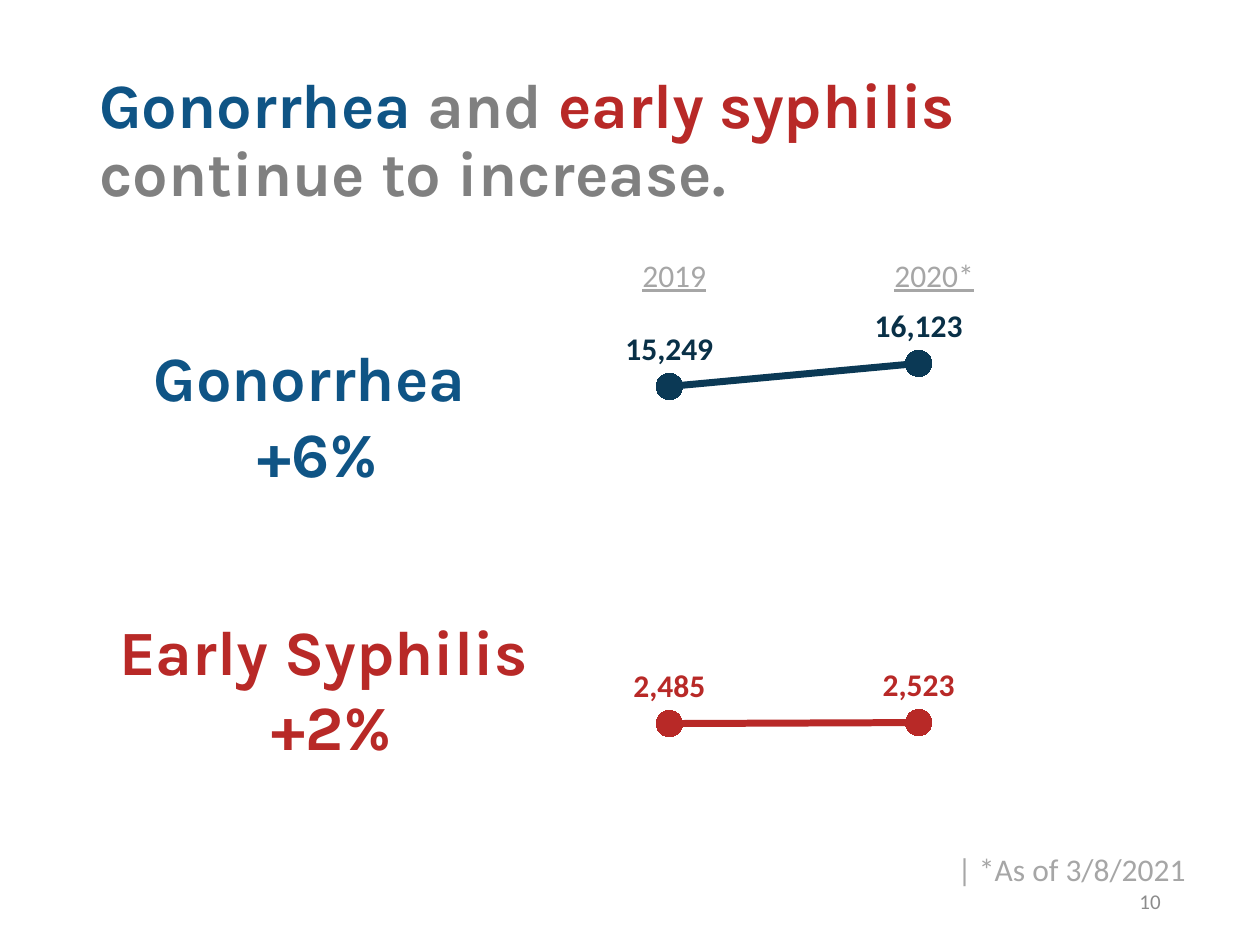
"""Build the slide on the rise of gonorrhea and early syphilis, 2019 to 2020."""
from pptx import Presentation
from pptx.chart.data import CategoryChartData
from pptx.dml.color import RGBColor
from pptx.enum.chart import XL_CHART_TYPE, XL_LABEL_POSITION, XL_MARKER_STYLE
from pptx.enum.text import MSO_ANCHOR, PP_ALIGN
from pptx.util import Inches, Pt
from lxml import etree

BLUE = RGBColor(0x0F, 0x54, 0x85)
RED = RGBColor(0xB8, 0x29, 0x27)
GRAY = RGBColor(0x80, 0x80, 0x80)
LIGHT = RGBColor(0xA6, 0xA6, 0xA6)
NUMBER = RGBColor(0x8C, 0x8C, 0x8C)
NAVY = RGBColor(0x0B, 0x39, 0x55)
DARK = RGBColor(0x09, 0x30, 0x47)
BLACK = RGBColor(0, 0, 0)


def add_text(box, paragraphs, font, size, bold=False, align=PP_ALIGN.LEFT, anchor=MSO_ANCHOR.TOP):
    tf = s.shapes.add_textbox(*[Inches(v) for v in box]).text_frame
    tf.word_wrap = True
    tf.vertical_anchor = anchor
    for i, runs in enumerate(paragraphs):
        p = tf.paragraphs[0] if i == 0 else tf.add_paragraph()
        p.alignment = align
        p.font.name, p.font.size, p.font.bold = font, Pt(size), bold
        for text, color in runs:
            r = p.add_run()
            r.text = text
            r.font.color.rgb = color
    return tf


prs = Presentation()
prs.slide_width, prs.slide_height = Inches(10), Inches(7.5)
s = prs.slides.add_slide(prs.slide_layouts[6])

title = [("Gonorrhea ", BLUE), ("and ", GRAY), ("early syphilis ", RED), ("continue to increase.", GRAY)]
tf = add_text((0.69, 0.4, 8.62, 1.45), [title], "Karla", 36, True, anchor=MSO_ANCHOR.MIDDLE)
tf.paragraphs[0].line_spacing = 0.9

for box, name, change, color in [
    ((0.69, 2.64, 3.66, 1.31), "Gonorrhea ", "+6%", BLUE),
    ((0.65, 4.81, 3.96, 1.31), "Early Syphilis ", "+2%", RED),
]:
    add_text(box, [[(name, color)], [(change, color)]], "Karla", 36, True, PP_ALIGN.CENTER)

add_text((7.5, 6.7, 2.47, 0.4), [[("| *As of 3/8/2021", LIGHT)]], "Calibri", 18)

data = CategoryChartData(number_format="#,##0")
data.categories = ["1", "2"]
data.add_series("Series 1", (15249, 16123))
data.add_series("Series 2", (2485, 2523))
chart = s.shapes.add_chart(XL_CHART_TYPE.LINE_MARKERS, Inches(4.17), Inches(2.34),
                           Inches(4.14), Inches(4.08), data).chart
chart.has_legend = False
chart.has_title = False
chart.font.name, chart.font.size = "Calibri", Pt(10)
chart.font.color.rgb = BLACK
chart.value_axis.minimum_scale = 0
chart.value_axis.maximum_scale = 18000
chart.value_axis.has_major_gridlines = False
chart.value_axis.visible = False
chart.category_axis.visible = False

plot = chart.plots[0]
plot.vary_by_categories = False
for series, color, label_color in zip(plot.series, (NAVY, RED), (DARK, RED)):
    series.smooth = False
    series.format.line.color.rgb = color
    series.format.line.width = Pt(4)
    marker = series.marker
    marker.style, marker.size = XL_MARKER_STYLE.CIRCLE, 15
    marker.format.fill.solid()
    marker.format.fill.fore_color.rgb = color
    marker.format.line.color.rgb = color
    labels = series.data_labels
    labels.show_value = True
    labels.number_format, labels.number_format_is_linked = "#,##0", False
    labels.position = XL_LABEL_POSITION.ABOVE
    labels.font.name, labels.font.size, labels.font.bold = "Calibri", Pt(18), True
    labels.font.color.rgb = label_color

C = "{http://schemas.openxmlformats.org/drawingml/2006/chart}"
area = chart._chartSpace.find(f".//{C}plotArea")
for old in area.findall(f"{C}layout"):
    area.remove(old)
layout = etree.Element(f"{C}layout")
manual = etree.SubElement(layout, f"{C}manualLayout")
for tag, val in [("layoutTarget", "inner"), ("xMode", "edge"), ("yMode", "edge"),
                 ("x", "0.037"), ("y", "0.037"), ("w", "0.956"), ("h", "0.925")]:
    etree.SubElement(manual, f"{C}{tag}", val=val)
area.insert(0, layout)

years = [("2019", LIGHT), ("\t\t\t", BLACK), ("2020*", LIGHT)]
tf = add_text((5, 1.98, 3.06, 0.4), [years], "Calibri", 18)
for r in tf.paragraphs[0].runs[::2]:
    r.font.underline = True

add_text((7.06, 6.95, 2.25, 0.4), [[("10", NUMBER)]], "Calibri", 12,
         align=PP_ALIGN.RIGHT, anchor=MSO_ANCHOR.MIDDLE)

prs.save("out.pptx")
